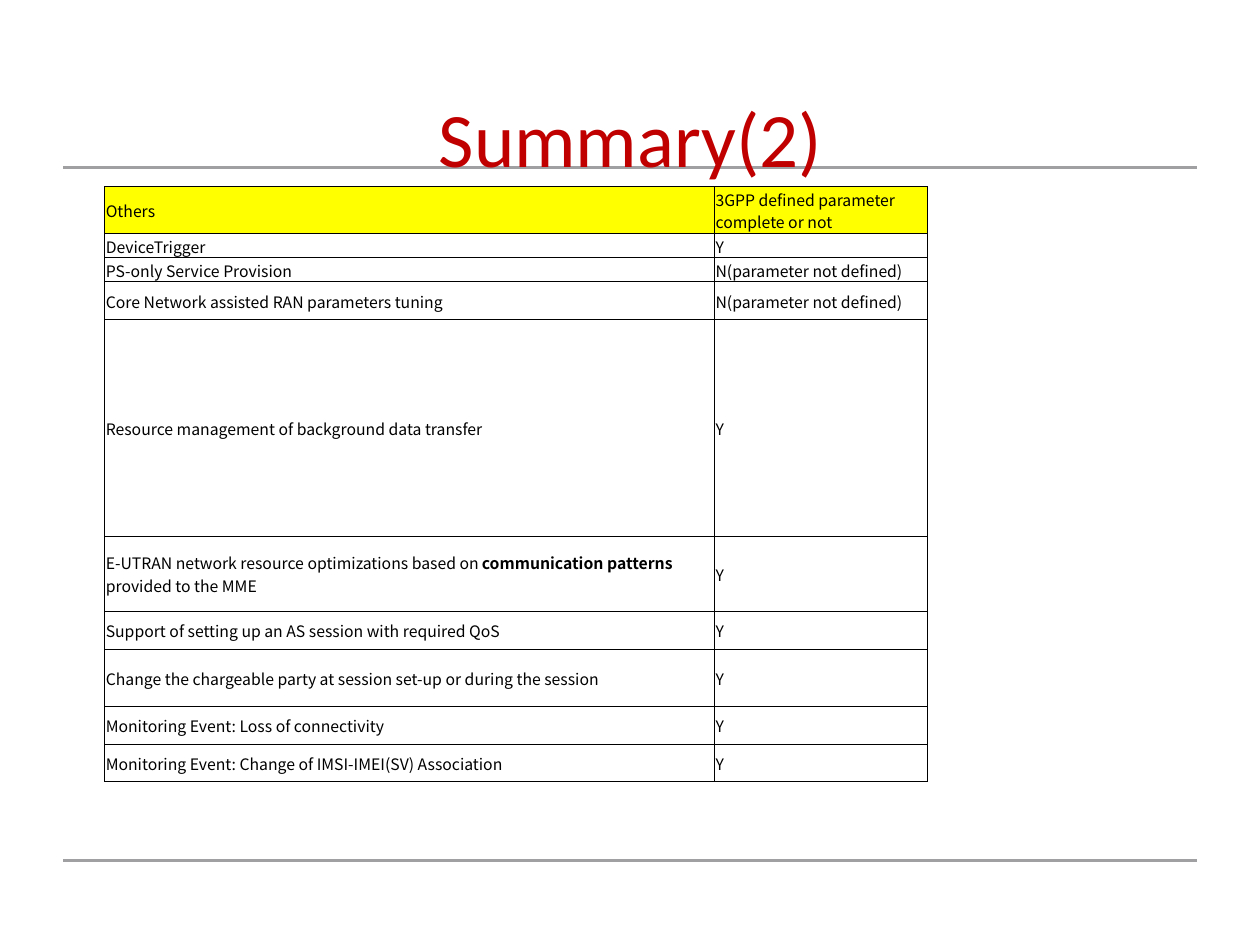
import pptx
import pptx.util
import pptx.dml.color
import pptx.enum.text
import pptx.oxml
import pptx.oxml.ns
import lxml.etree

THEME = {
    "title_color": "C00000", "text_color": "000000", "rule_color": "A0A0A3",
    "header_fill": "FFFF00", "border_color": "000000",
    "title_font": "Calibri", "table_font": "Noto Sans CJK SC",
    "title_size": 44, "table_size": 9, "rule_width": 1.75, "border_width": 0.5,
}
ROWS = [
    (2.1, "Others", "3GPP defined parameter complete or not"),
    (2.1, "DeviceTrigger", "Y"),
    (2.1, "PS-only Service Provision", "N(parameter not defined)"),
    (4, "Core Network assisted RAN parameters tuning", "N(parameter not defined)"),
    (22.9, "Resource management of background data transfer", "Y"),
    (8, "E-UTRAN network resource optimizations based on |communication patterns |provided to the MME", "Y"),
    (4, "Support of setting up an AS session with required QoS", "Y"),
    (6, "Change the chargeable party at session set-up or during the session", "Y"),
    (4, "Monitoring Event: Loss of connectivity", "Y"),
    (4, "Monitoring Event: Change of IMSI-IMEI(SV) Association", "Y"),
]
COLUMNS = (48.4, 16.9)

presentation = pptx.Presentation()
presentation.slide_width = pptx.util.Inches(10)
presentation.slide_height = pptx.util.Inches(7.5)
percent_x = presentation.slide_width / 100
percent_y = presentation.slide_height / 100
slide = presentation.slides.add_slide(presentation.slide_layouts[5])


def write_text(text, frame, font, size, color, align):
    paragraph = frame.paragraphs[0]
    paragraph.alignment = align
    for index, part in enumerate(text.split("|")):
        run = paragraph.add_run()
        run.text = part
        run.font.name = font
        run.font.size = pptx.util.Pt(size)
        run.font.bold = index % 2 == 1
        run.font.color.rgb = pptx.dml.color.RGBColor.from_string(color)
        east_asian = lxml.etree.SubElement(run.font._element, pptx.oxml.ns.qn("a:ea"))
        east_asian.set("typeface", font)


for rule_y in (91.07, 17.73):
    y = int(rule_y * percent_y)
    rule = slide.shapes.add_connector(1, int(5 * percent_x), y, int(95 * percent_x), y)
    rule.line.color.rgb = pptx.dml.color.RGBColor.from_string(THEME["rule_color"])
    rule.line.width = pptx.util.Pt(THEME["rule_width"])
    lxml.etree.SubElement(rule._element.spPr, pptx.oxml.ns.qn("a:effectLst"))

title = slide.shapes.title
title._element.getparent().append(title._element)
title.left, title.top = int(8.3 * percent_x), int(8.13 * percent_y)
title.width, title.height = int(83.5 * percent_x), int(12.67 * percent_y)
title.text_frame.auto_size = pptx.enum.text.MSO_AUTO_SIZE.NONE
title.text_frame.vertical_anchor = pptx.enum.text.MSO_ANCHOR.MIDDLE
write_text("Summary(2)", frame=title.text_frame, font=THEME["title_font"],
           size=THEME["title_size"], color=THEME["title_color"],
           align=pptx.enum.text.PP_ALIGN.CENTER)

table = slide.shapes.add_table(
    len(ROWS), len(COLUMNS), int(8.3 * percent_x), int(19.73 * percent_y),
    int(sum(COLUMNS) * percent_x), int(sum(row[0] for row in ROWS) * percent_y)).table
table.first_row = False
table.horz_banding = False
for column, share in zip(table.columns, COLUMNS):
    column.width = int(share * percent_x)

for row_index, (share, *texts) in enumerate(ROWS):
    table.rows[row_index].height = int(share * percent_y)
    for column_index, text in enumerate(texts):
        cell = table.cell(row_index, column_index)
        cell.margin_left = cell.margin_right = cell.margin_top = pptx.util.Inches(0.01)
        cell.margin_bottom = 0
        cell.vertical_anchor = pptx.enum.text.MSO_ANCHOR.MIDDLE
        write_text(text, frame=cell.text_frame, font=THEME["table_font"],
                   size=THEME["table_size"], color=THEME["text_color"],
                   align=pptx.enum.text.PP_ALIGN.LEFT)
        properties = cell._tc.get_or_add_tcPr()
        for side in ("lnL", "lnR", "lnT", "lnB"):
            border = lxml.etree.SubElement(properties, pptx.oxml.ns.qn("a:" + side))
            border.set("w", str(pptx.util.Pt(THEME["border_width"])))
            fill = lxml.etree.SubElement(border, pptx.oxml.ns.qn("a:solidFill"))
            color = lxml.etree.SubElement(fill, pptx.oxml.ns.qn("a:srgbClr"))
            color.set("val", THEME["border_color"])
        if row_index == 0:
            cell.fill.solid()
            cell.fill.fore_color.rgb = pptx.dml.color.RGBColor.from_string(THEME["header_fill"])
        else:
            cell.fill.background()

presentation.save("out.pptx")
